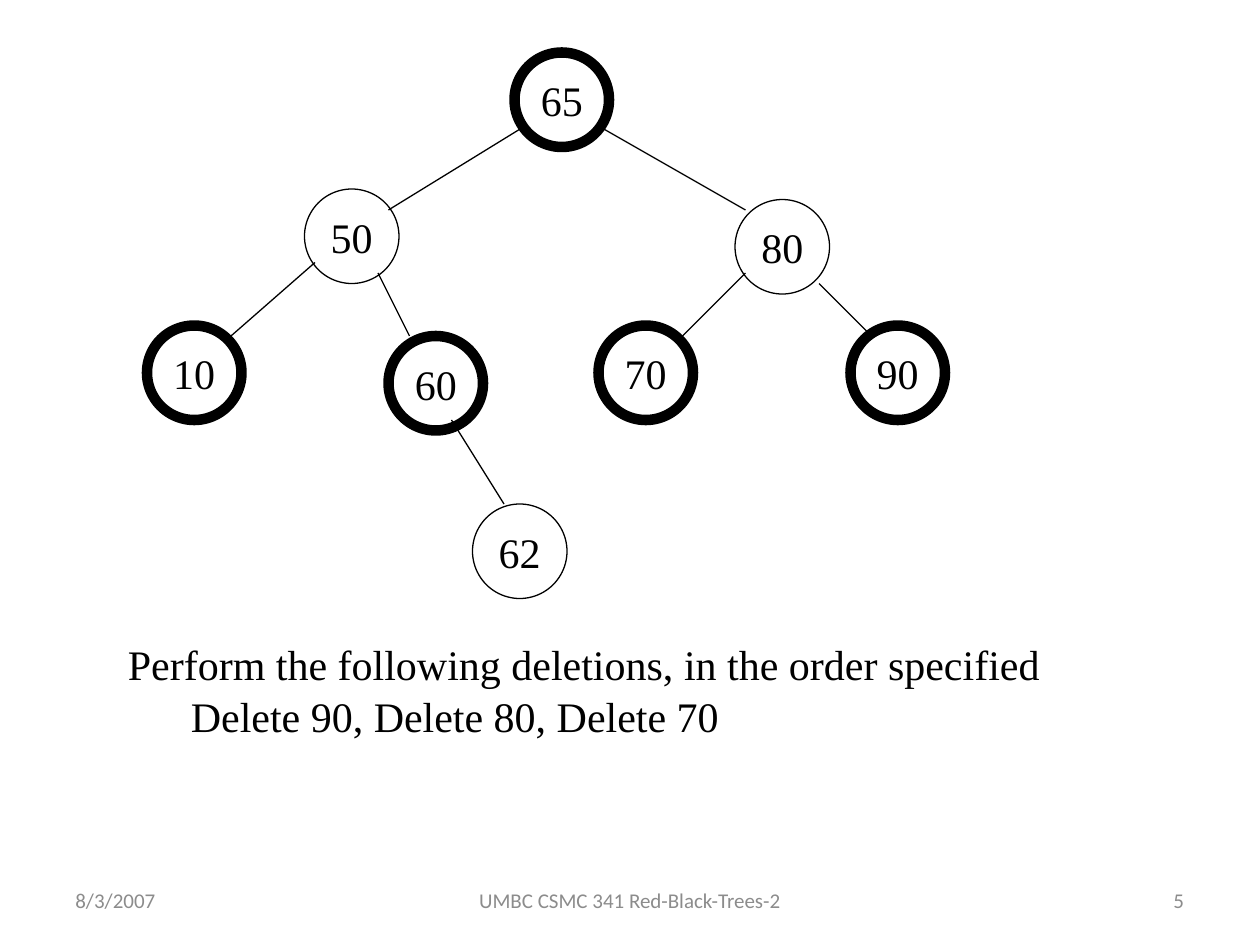
import pptx
import pptx.dml.color
import pptx.enum.shapes
import pptx.enum.text
import pptx.oxml
import pptx.util

Cm = pptx.util.Cm
Align = pptx.enum.text.PP_ALIGN
Anchor = pptx.enum.text.MSO_ANCHOR

GRID_CM = 2.54 / 12
NODE_SIZE = 9
RED_WIDTH, BLACK_WIDTH = 0.75, 6
BODY_FONT = {"name": "Times New Roman", "size": pptx.util.Pt(24)}
FOOTER_FONT = {"name": "Calibri", "size": pptx.util.Pt(12)}

NODES = [
    ("65", 49, 5, BLACK_WIDTH),
    ("50", 29, 18, RED_WIDTH),
    ("80", 70, 19, RED_WIDTH),
    ("10", 14, 31, BLACK_WIDTH),
    ("60", 37, 32, BLACK_WIDTH),
    ("70", 57, 31, BLACK_WIDTH),
    ("90", 81, 31, BLACK_WIDTH),
    ("62", 45, 48, RED_WIDTH),
]
EDGES = [
    (50, 12, 37, 20),
    (30, 25, 22, 32),
    (36, 26, 39, 32),
    (57, 12, 71, 20),
    (71, 26, 65, 32),
    (78, 27, 83, 32),
    (43, 40, 48, 48),
]
FOOTERS = [
    ("8/3/2007", 1.27, 5.92, Align.LEFT),
    ("UMBC CSMC 341 Red-Black-Trees-2", 8.68, 8.04, Align.CENTER),
    ("5", 18.2, 5.92, Align.RIGHT),
]


def color(value):
    """Return the colour for a hex string."""
    return pptx.dml.color.RGBColor.from_string(value)


def grid(*units):
    """Return lengths for positions counted in grid units."""
    return [Cm(unit * GRID_CM) for unit in units]


def apply_format(target, values):
    """Set each attribute named in a dict of format values."""
    for name, value in values.items():
        setattr(target, name, value)


def write_text(shape, text, font, font_color, alignment, frame_format):
    """Write one formatted paragraph into a shape."""
    apply_format(shape.text_frame, frame_format)
    paragraph = shape.text_frame.paragraphs[0]
    paragraph.text = text
    paragraph.alignment = alignment
    for run in paragraph.runs:
        apply_format(run.font, font)
        run.font.color.rgb = color(font_color)


def format_line(line, width):
    """Draw a black line of the given width in points."""
    line.color.rgb = color("000000")
    line.width = pptx.util.Pt(width)


def add_node(slide, key, left, top, line_width):
    """Add a tree node whose outline width tells its colour."""
    shape = slide.shapes.add_shape(
        pptx.enum.shapes.MSO_SHAPE.OVAL, *grid(left, top, NODE_SIZE, NODE_SIZE))
    shape.shadow.inherit = False
    shape.fill.solid()
    shape.fill.fore_color.rgb = color("FFFFFF")
    format_line(shape.line, line_width)
    write_text(shape, key, BODY_FONT, "000000", Align.CENTER,
               {"word_wrap": False, "vertical_anchor": Anchor.MIDDLE})


def add_edge(slide, *ends):
    """Add a straight edge between a parent and a child."""
    connector = slide.shapes.add_connector(
        pptx.enum.shapes.MSO_CONNECTOR.STRAIGHT, *grid(*ends))
    format_line(connector.line, RED_WIDTH)
    properties = connector._element.spPr
    properties.append(pptx.oxml.parse_xml(
        '<a:effectLst xmlns:a="http://schemas.openxmlformats.org/drawingml/2006/main"/>'))


def add_footer(slide, text, left, width, alignment):
    """Add a grey footer text."""
    box = slide.shapes.add_textbox(Cm(left), Cm(17.65), Cm(width), Cm(1.01))
    write_text(box, text, FOOTER_FONT, "8C8C8C", alignment,
               {"word_wrap": True, "vertical_anchor": Anchor.MIDDLE})


def add_task(slide, text):
    """Add the exercise text below the tree."""
    box = slide.shapes.add_textbox(*grid(11, 60, 105, 10.8))
    write_text(box, text, BODY_FONT, "000000", Align.LEFT,
               {"word_wrap": True, "vertical_anchor": Anchor.TOP})
    box.text_frame.paragraphs[0].line_spacing = 1.04


def main():
    """Build the slide and save it."""
    presentation = pptx.Presentation()
    apply_format(presentation, {"slide_width": Cm(25.4), "slide_height": Cm(19.05)})
    slide = presentation.slides.add_slide(presentation.slide_layouts.get_by_name("Blank"))
    for footer in FOOTERS:
        add_footer(slide, *footer)
    for node in NODES:
        add_node(slide, *node)
    for edge in EDGES:
        add_edge(slide, *edge)
    add_task(slide, "Perform the following deletions, in the order specified"
                    "\v\tDelete 90, Delete 80, Delete 70")
    presentation.save("out.pptx")


if __name__ == "__main__":
    main()
